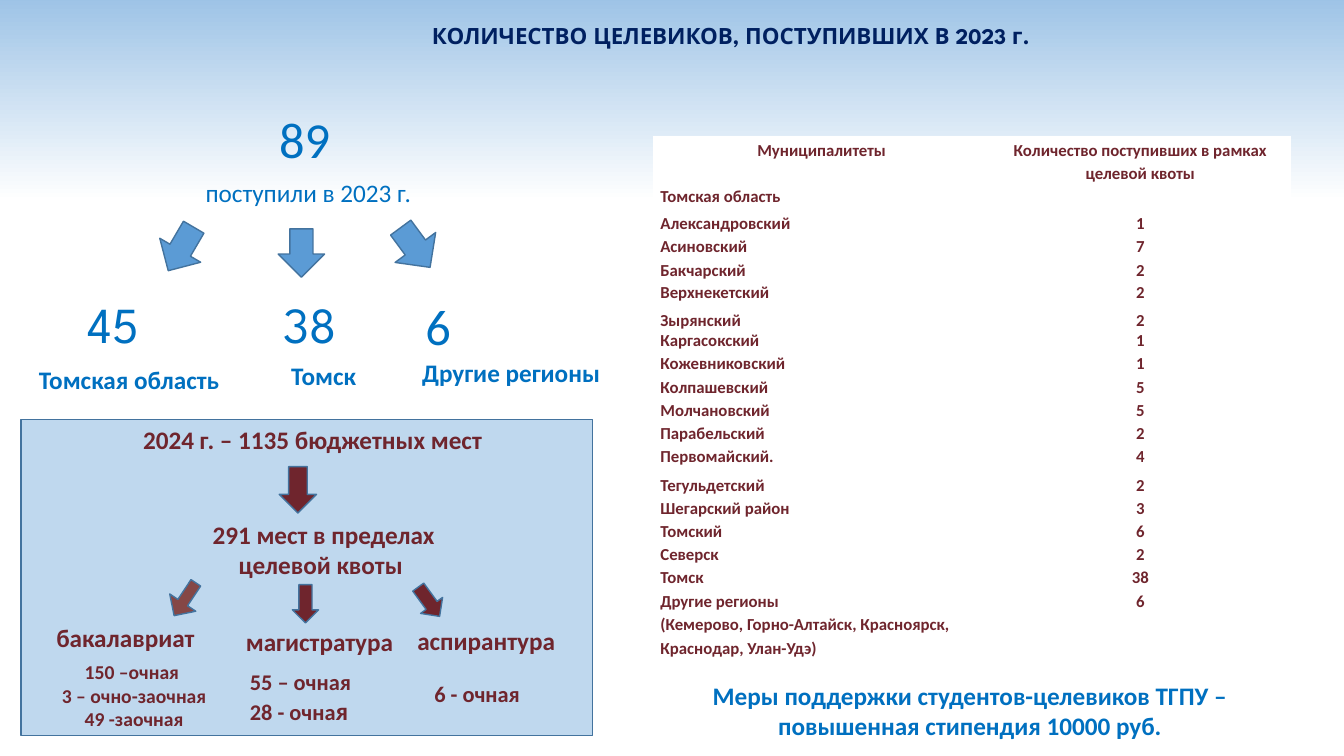
from lxml import etree
from pptx import Presentation
from pptx.dml.color import RGBColor
from pptx.enum.shapes import MSO_SHAPE
from pptx.enum.text import MSO_ANCHOR, PP_ALIGN
from pptx.oxml.ns import qn
from pptx.util import Emu, Pt

RECTANGLE = MSO_SHAPE.RECTANGLE
DOWN_ARROW = MSO_SHAPE.DOWN_ARROW
LEFT, CENTER = PP_ALIGN.LEFT, PP_ALIGN.CENTER
MIDDLE = MSO_ANCHOR.MIDDLE
PX = 9144
THEME = {
    "body": "Calibri", "display": "League Spartan",
    "navy": "002060", "blue": "0070C0", "maroon": "6F252D", "brown": "854746",
    "sky": "9DC3E6", "accent": "5B9BD5", "outline": "43739E", "white": "FFFFFF",
    "number": 36, "label": 18, "small": 16, "tiny": 14, "cell": 12,
}


def color(name):
    return RGBColor.from_string(THEME[name])


def write(frame, text, size="label", tint="maroon", font="body", bold=True, align=CENTER,
          spacing=None, after=None, tail="", tail_size="label"):
    frame.word_wrap = True
    lines = text.split("\n")
    for index, line in enumerate(lines):
        paragraph = frame.add_paragraph() if index else frame.paragraphs[0]
        paragraph.alignment = align
        paragraph.line_spacing = spacing
        paragraph.space_after = after
        pieces = [(line, size)]
        if tail and index == len(lines) - 1:
            pieces.append((tail, tail_size))
        for piece, piece_size in pieces:
            run = paragraph.add_run()
            run.text = piece
            run.font.name = THEME[font]
            run.font.size = Pt(THEME[piece_size])
            run.font.bold = bold
            run.font.color.rgb = color(tint)


presentation = Presentation()
presentation.slide_width = Emu(1333 * PX)
presentation.slide_height = Emu(750 * PX)
slide = presentation.slides.add_slide(presentation.slide_layouts[6])
shapes = slide.shapes

band = shapes.add_shape(RECTANGLE, 0, -3 * PX, 1333 * PX, 203 * PX)
band.shadow.inherit = False
band.line.fill.background()
band.fill.gradient()
band.fill.gradient_angle = 270
for stop, tint in zip(band.fill.gradient_stops, ("sky", "white")):
    stop.color.rgb = color(tint)

panel = shapes.add_shape(RECTANGLE, 21 * PX, 416 * PX, 567 * PX, 314 * PX)
panel.shadow.inherit = False
panel.fill.solid()
panel.fill.fore_color.rgb = color("accent")
panel.line.color.rgb = color("outline")
panel.line.width = Pt(1)
panel_color = panel._element.spPr.find(qn("a:solidFill")).find(qn("a:srgbClr"))
etree.SubElement(panel_color, qn("a:alpha")).set("val", "39000")

arrows = [
    (156, 222, 47, 50, 30.4, "accent", 0.5),
    (276, 227, 46, 48, 0, "accent", 0.5),
    (387, 221, 50, 49, 323.6, "accent", 0.5),
    (277, 463, 37, 46, 0, "maroon", 0.5),
    (168, 575, 31, 39, 33.5, "brown", 0.37),
    (412, 579, 27, 36, 323.9, "maroon", 0.5),
    (290, 580, 26, 38, 0, "maroon", 0.5),
]
for left, top, width, height, rotation, tint, stem in arrows:
    arrow = shapes.add_shape(DOWN_ARROW, left * PX, top * PX, width * PX, height * PX)
    arrow.shadow.inherit = False
    arrow.rotation = rotation
    arrow.adjustments[0] = stem
    arrow.fill.solid()
    arrow.fill.fore_color.rgb = color(tint)
    arrow.line.color.rgb = color("outline")
    arrow.line.width = Pt(1)

number = {"size": "number", "tint": "blue", "bold": False, "align": LEFT}
region = {"tint": "blue"}
level = {"align": LEFT}
texts = [
    (267, 102, 99, 71, "89", number),
    (194, 171, 245, 40, "поступили в 2023 г.", {**number, "size": "label"}),
    (77, 286, 99, 71, "45", {**number, "font": "display"}),
    (271, 286, 99, 71, "38", {**number, "font": "display"}),
    (412, 288, 126, 71, "6", number),
    (21, 357, 214, 40, "Томская область", region),
    (238, 353, 166, 40, "Томск", region),
    (400, 350, 214, 40, "Другие регионы", region),
    (132, 416, 382, 40, "2024 г. – 1135 бюджетных мест", level),
    (174, 510, 294, 71, "291 мест в пределах целевой квоты ", {}),
    (46, 612, 188, 40, "бакалавриат", level),
    (234, 616, 178, 40, "магистратура", level),
    (404, 615, 161, 40, "аспирантура", level),
    (12, 650, 242, 81, "150 –очная \n3 – очно-заочная\n49 -заочная", {"size": "tiny"}),
    (238, 658, 159, 67, "55 – очная\n28 - очна", {**level, "size": "small", "tail": "я"}),
    (421, 670, 133, 37, "6 - очная", {**level, "size": "small"}),
    (624, 670, 676, 71,
     "Меры поддержки студентов-целевиков ТГПУ – повышенная стипендия 10000 руб.", region),
]
for left, top, width, height, text, style in texts:
    box = shapes.add_textbox(left * PX, top * PX, width * PX, height * PX)
    write(box.text_frame, text, **style)

title = shapes.add_textbox(176 * PX, 0, 1104 * PX, 74 * PX)
title.text_frame.vertical_anchor = MIDDLE
write(title.text_frame, "КОЛИЧЕСТВО ЦЕЛЕВИКОВ, ПОСТУПИВШИХ В 2023 г. ",
      size="small", tint="navy", font="display", spacing=0.9)

municipalities = [
    ("Муниципалитеты", "Количество поступивших в рамках целевой квоты", 45),
    ("Томская область", "", 22),
    ("Александровский", "1", 19),
    ("Асиновский", "7", 22),
    ("Бакчарский", "2", 25),
    ("Верхнекетский", "2", 25),
    ("Зырянский", "2", 22),
    ("Каргасокский", "1", 19),
    ("Кожевниковский", "1", 22),
    ("Колпашевский", "5", 22),
    ("Молчановский", "5", 22),
    ("Парабельский", "2", 22),
    ("Первомайский.", "4", 28),
    ("Тегульдетский", "2", 22),
    ("Шегарский район", "3", 22),
    ("Томский", "6", 22),
    ("Северск", "2", 22),
    ("Томск", "38", 22),
    ("Другие регионы\n(Кемерово, Горно-Алтайск, Красноярск, Краснодар, Улан-Удэ)", "6", 67),
]
single_spaced = ("Александровский", "Верхнекетский", "Каргасокский")
table = shapes.add_table(len(municipalities), 2, 648 * PX, 136 * PX, 632 * PX, 509 * PX).table
table.horz_banding = False
for column, width in zip(table.columns, (334, 298)):
    column.width = Emu(width * PX)
for row_index, (name, count, height) in enumerate(municipalities):
    table.rows[row_index].height = Emu(height * PX)
    spaced = name not in single_spaced
    for column_index, text in enumerate((name, count)):
        cell = table.cell(row_index, column_index)
        cell.fill.solid()
        cell.fill.fore_color.rgb = color("white")
        cell.margin_left = cell.margin_right = Emu(7 * PX)
        cell.margin_top = cell.margin_bottom = 0
        write(cell.text_frame, text, size="cell",
              align=LEFT if row_index and not column_index else CENTER,
              spacing=1.15 if spaced else None,
              after=Pt(10) if spaced and "\n" not in text else None)

presentation.save("out.pptx")
